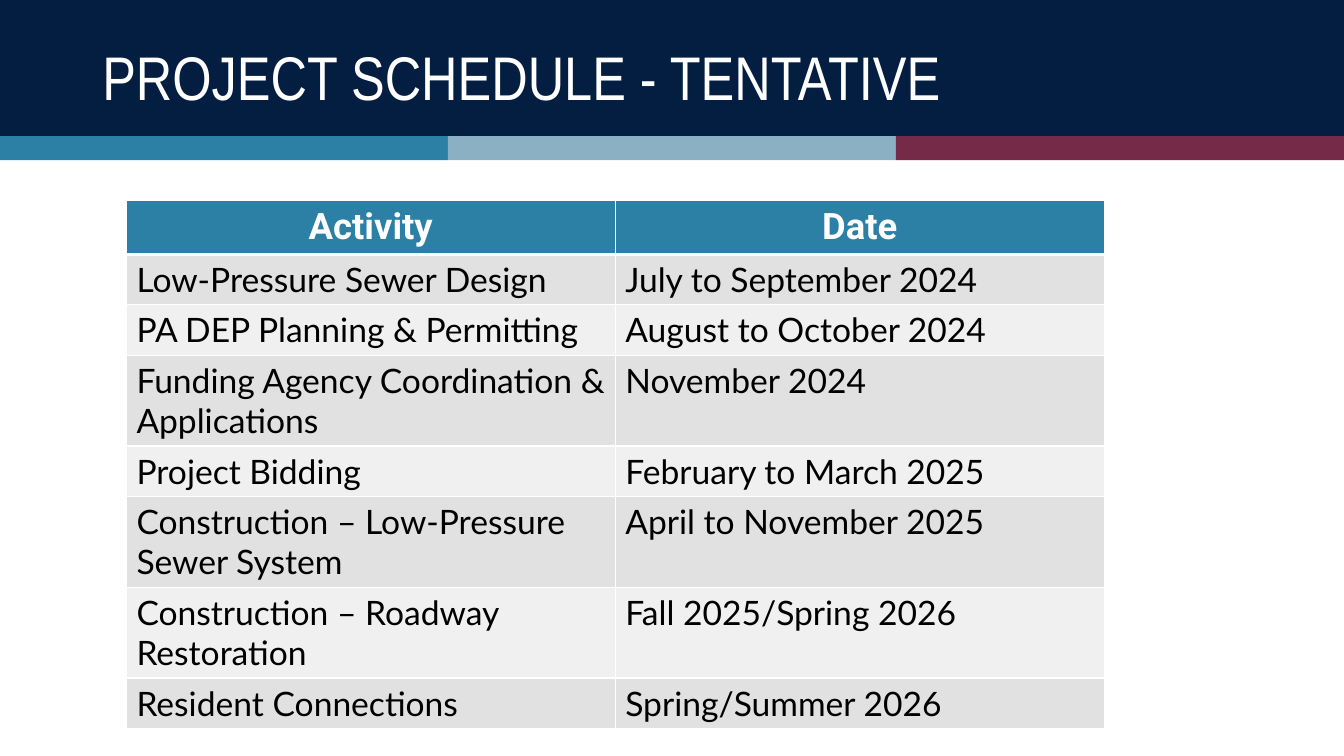
from dataclasses import dataclass

from lxml import etree
from pptx import Presentation, util as u
from pptx.dml import color
from pptx.enum import shapes, text
from pptx.oxml import ns

NAVY = color.RGBColor(0x04, 0x1E, 0x42)
TEAL = color.RGBColor(0x2C, 0x7F, 0xA5)
MIST = color.RGBColor(0x8C, 0xB0, 0xC3)
WINE = color.RGBColor(0x75, 0x2B, 0x47)
WHITE = color.RGBColor(0xFF, 0xFF, 0xFF)
BLACK = color.RGBColor(0, 0, 0)
DARK_BAND = color.RGBColor(0xE1, 0xE1, 0xE1)
LIGHT_BAND = color.RGBColor(0xF0, 0xF0, 0xF0)

PAGE_WIDTH, PAGE_HEIGHT = 960, 540
HEADER_HEIGHT, STRIPE_HEIGHT = 97.2, 17.2
STRIPE_COLORS = (TEAL, MIST, WINE)
STRIPE_WIDTH = PAGE_WIDTH / len(STRIPE_COLORS)
TABLE_LEFT, TABLE_TOP, COLUMN_WIDTH = 90.3, 143.3, 349.2
ONE_LINE, TWO_LINES = 36, 64.8

TITLE_FONT = {"name": "Arial Narrow", "size": u.Pt(44), "bold": False}
HEAD_FONT = {"name": "Roboto", "size": u.Pt(26), "bold": True}
BODY_FONT = {"name": "Lato", "size": u.Pt(24), "bold": False}


@dataclass
class Band:
    left: float
    top: float
    width: float
    height: float
    fill: color.RGBColor


@dataclass
class Step:
    activity: str
    date: str
    height: float = ONE_LINE


BANDS = [Band(0, 0, PAGE_WIDTH, HEADER_HEIGHT, NAVY)] + [
    Band(index * STRIPE_WIDTH, HEADER_HEIGHT, STRIPE_WIDTH, STRIPE_HEIGHT, fill)
    for index, fill in enumerate(STRIPE_COLORS)
]

STEPS = [
    Step("Activity", "Date"),
    Step("Low-Pressure Sewer Design", "July to September 2024"),
    Step("PA DEP Planning & Permitting", "August to October 2024"),
    Step("Funding Agency Coordination & Applications", "November 2024", TWO_LINES),
    Step("Project Bidding", "February to March 2025"),
    Step("Construction – Low-Pressure Sewer System", "April to November 2025", TWO_LINES),
    Step("Construction – Roadway Restoration", "Fall 2025/Spring 2026", TWO_LINES),
    Step("Resident Connections", "Spring/Summer 2026"),
]


def write(para, wording: str, font: dict, ink: color.RGBColor) -> None:
    span = para.add_run()
    span.text = wording
    for key, value in font.items():
        setattr(span.font, key, value)
    span.font.color.rgb = ink


def draw_band(page, band: Band) -> None:
    box = page.shapes.add_shape(
        shapes.MSO_SHAPE.RECTANGLE,
        u.Pt(band.left), u.Pt(band.top), u.Pt(band.width), u.Pt(band.height),
    )
    box.shadow.inherit = False
    box.fill.solid()
    box.fill.fore_color.rgb = band.fill
    box.line.fill.background()


def draw_title(page, wording: str) -> None:
    box = page.shapes.add_textbox(u.Pt(66), u.Pt(18), u.Pt(857.5), u.Pt(78.5))
    frame = box.text_frame
    frame.word_wrap = True
    frame.vertical_anchor = text.MSO_ANCHOR.MIDDLE
    para = frame.paragraphs[0]
    para.line_spacing = 0.9
    write(para, wording, TITLE_FONT, WHITE)


def draw_borders(cell, top: float, bottom: float) -> None:
    properties = cell._tc.get_or_add_tcPr()
    for side, width in {"lnL": 1, "lnR": 1, "lnT": top, "lnB": bottom}.items():
        line = etree.SubElement(properties, ns.qn(f"a:{side}"), w=str(u.Pt(width)))
        fill = etree.SubElement(line, ns.qn("a:solidFill"))
        etree.SubElement(fill, ns.qn("a:srgbClr"), val=str(WHITE))


def draw_cell(cell, wording: str, row: int) -> None:
    draw_borders(cell, 3 if row == 1 else 1, 3 if row == 0 else 1)
    cell.fill.solid()
    para = cell.text_frame.paragraphs[0]
    if row == 0:
        cell.fill.fore_color.rgb = TEAL
        para.alignment = text.PP_ALIGN.CENTER
        write(para, wording, HEAD_FONT, WHITE)
    else:
        cell.fill.fore_color.rgb = DARK_BAND if row % 2 else LIGHT_BAND
        write(para, wording, BODY_FONT, BLACK)


def draw_schedule(page, steps: list[Step]) -> None:
    table = page.shapes.add_table(
        len(steps), 2, u.Pt(TABLE_LEFT), u.Pt(TABLE_TOP),
        u.Pt(2 * COLUMN_WIDTH), u.Pt(sum(step.height for step in steps)),
    ).table
    for column in table.columns:
        column.width = u.Pt(COLUMN_WIDTH)
    for row, step in enumerate(steps):
        table.rows[row].height = u.Pt(step.height)
        for column, wording in enumerate((step.activity, step.date)):
            draw_cell(table.cell(row, column), wording, row)


def main() -> None:
    deck = Presentation()
    deck.slide_width, deck.slide_height = u.Pt(PAGE_WIDTH), u.Pt(PAGE_HEIGHT)
    page = deck.slides.add_slide(deck.slide_layouts[6])
    for band in BANDS:
        draw_band(page, band)
    draw_title(page, "PROJECT SCHEDULE - TENTATIVE")
    draw_schedule(page, STEPS)
    deck.save("out.pptx")


if __name__ == "__main__":
    main()
